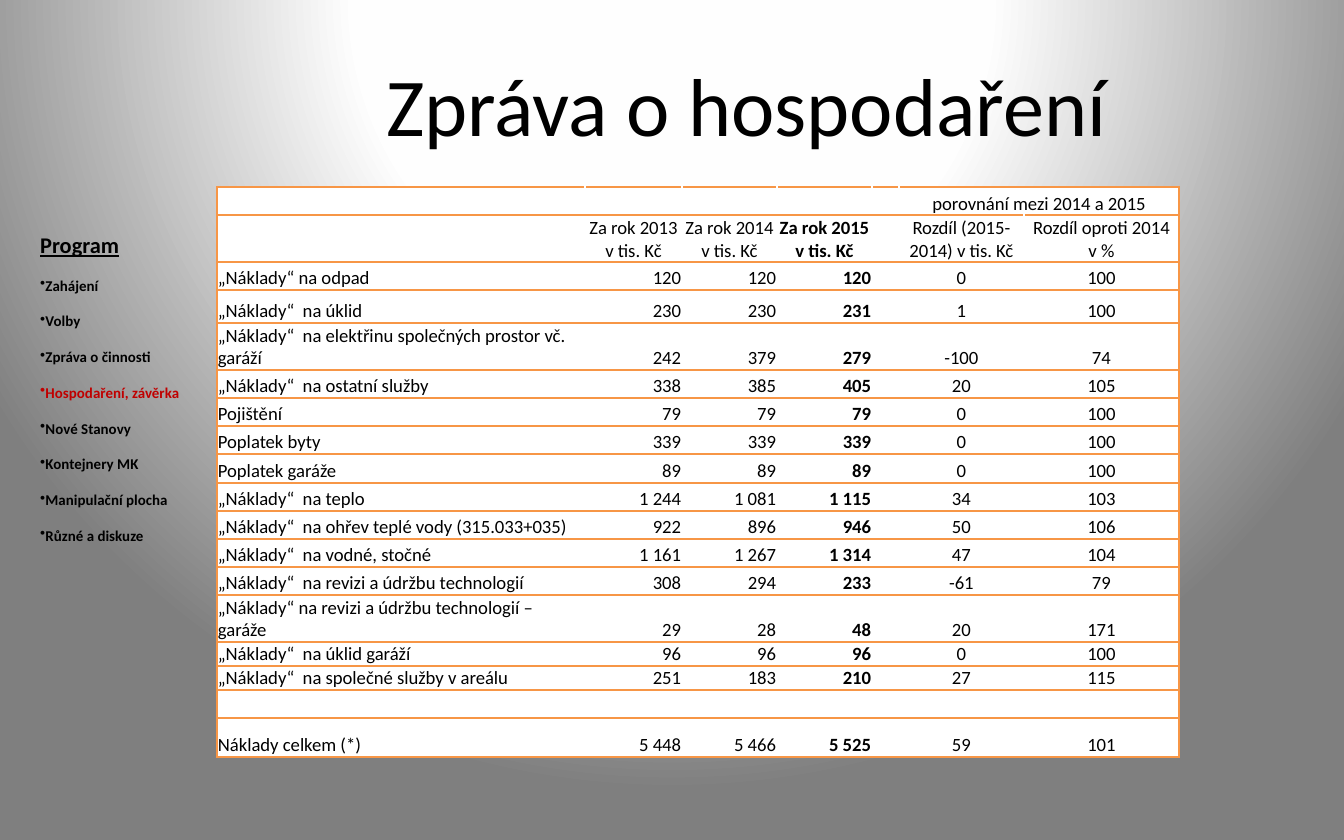
from dataclasses import dataclass

from lxml.etree import SubElement
from pptx import Presentation
from pptx.dml.color import RGBColor
from pptx.enum.text import MSO_ANCHOR, PP_ALIGN
from pptx.oxml import parse_xml
from pptx.oxml.ns import nsdecls, qn
from pptx.util import Pt


@dataclass
class Theme:
    font: str = "Calibri"
    ink: str = "000000"
    accent: str = "C00000"
    border: str = "F79646"
    paper: str = "FFFFFF"
    title: int = 44
    heading: int = 12
    menu: int = 8
    table: int = 10


theme = Theme()
EMU_PER_PX = 914400 / 134.4


def px(length):
    return round(length * EMU_PER_PX)


def style(paragraph, size, color=theme.ink, bold=False):
    paragraph.font.name = theme.font
    paragraph.font.size = Pt(size)
    paragraph.font.bold = bold
    paragraph.font.color.rgb = RGBColor.from_string(color)


presentation = Presentation()
presentation.slide_width, presentation.slide_height = px(1344), px(840)
slide = presentation.slides.add_slide(presentation.slide_layouts[6])

# Background: radial gradient centred above the slide
stops = "".join(
    f'<a:gs pos="{position * 1000}"><a:srgbClr val="{color}"/></a:gs>'
    for position, color in ((0, "FFFFFF"), (40, "FEFEFE"), (100, "7F7F7F"))
)
background = parse_xml(
    f'<p:bg {nsdecls("p", "a")}><p:bgPr><a:gradFill rotWithShape="1">'
    f'<a:gsLst>{stops}</a:gsLst><a:path path="circle">'
    '<a:fillToRect l="50000" t="-80000" r="50000" b="180000"/></a:path>'
    "</a:gradFill><a:effectLst/></p:bgPr></p:bg>"
)
slide.element.cSld.insert(0, background)

# Title
title_frame = slide.shapes.add_textbox(px(216), px(34), px(1061), px(140)).text_frame
title_frame.word_wrap = True
title_frame.vertical_anchor = MSO_ANCHOR.MIDDLE
title = title_frame.paragraphs[0]
title.text = "Zpráva o hospodaření"
title.alignment = PP_ALIGN.CENTER
style(title, theme.title)

# Cost table
rows = [
    ["", "", "", "", "", "porovnání mezi 2014 a 2015", ""],
    ["", "Za rok 2013\nv tis. Kč", "Za rok 2014\nv tis. Kč", "Za rok 2015\nv tis. Kč",
     "", "Rozdíl (2015-2014) v tis. Kč", "Rozdíl oproti 2014\vv %"],
    ["„Náklady“ na odpad", "120", "120", "120", "", "0", "100"],
    ["„Náklady“  na úklid", "230", "230", "231", "", "1", "100"],
    ["„Náklady“  na elektřinu společných prostor vč. garáží",
     "242", "379", "279", "", "-100", "74"],
    ["„Náklady“  na ostatní služby", "338", "385", "405", "", "20", "105"],
    ["Pojištění", "79", "79", "79", "", "0", "100"],
    ["Poplatek byty", "339", "339", "339", "", "0", "100"],
    ["Poplatek garáže", "89", "89", "89", "", "0", "100"],
    ["„Náklady“  na teplo", "1 244", "1 081", "1 115", "", "34", "103"],
    ["„Náklady“  na ohřev teplé vody (315.033+035)",
     "922", "896", "946", "", "50", "106"],
    ["„Náklady“  na vodné, stočné", "1 161", "1 267", "1 314", "", "47", "104"],
    ["„Náklady“  na revizi a údržbu technologií",
     "308", "294", "233", "", "-61", "79"],
    ["„Náklady“ na revizi a údržbu technologií – garáže",
     "29", "28", "48", "", "20", "171"],
    ["„Náklady“  na úklid garáží", "96", "96", "96", "", "0", "100"],
    ["„Náklady“  na společné služby v areálu", "251", "183", "210", "", "27", "115"],
    [""] * 7,
    ["Náklady celkem (*)", "5 448", "5 466", "5 525", "", "59", "101"],
]
column_widths = [368, 97, 95, 95, 27, 125, 155]
row_heights = [28, 47, 28, 33, 47, 28, 28, 28, 29, 28, 28, 28, 28, 47, 24, 24, 28, 39]
HEADER_ROWS = 2
CURRENT_YEAR = 3
LAST_COLUMN = len(column_widths) - 1
alignments = [PP_ALIGN.LEFT] + [PP_ALIGN.RIGHT] * 3 + [PP_ALIGN.CENTER] * 3

table = slide.shapes.add_table(
    len(rows), len(column_widths), px(217), px(187),
    px(sum(column_widths)), px(sum(row_heights)),
).table
table.first_row = table.horz_banding = False
for column, width in zip(table.columns, column_widths):
    column.width = px(width)
for row, height in zip(table.rows, row_heights):
    row.height = px(height)
table.cell(0, 5).merge(table.cell(0, 6))

for row_index, texts in enumerate(rows):
    for column_index, text in enumerate(texts):
        cell = table.cell(row_index, column_index)
        cell.text_frame.text = text
        cell.vertical_anchor = MSO_ANCHOR.BOTTOM
        cell.margin_left = cell.margin_right = cell.margin_top = px(1)
        cell.margin_bottom = 0
        for paragraph in cell.text_frame.paragraphs:
            is_header = row_index < HEADER_ROWS
            paragraph.alignment = PP_ALIGN.CENTER if is_header else alignments[column_index]
            style(paragraph, theme.table, bold=column_index == CURRENT_YEAR)
            if not text:
                SubElement(paragraph._p, qn("a:endParaRPr"), sz=str(theme.table * 100))

        # Orange rules between rows and around the table
        sides = ["T", "B"]
        if column_index == 0:
            sides.insert(0, "L")
        elif column_index == LAST_COLUMN or cell.is_merge_origin:
            sides.insert(0, "R")
        for side in sides:
            line = SubElement(cell._tc.get_or_add_tcPr(), qn(f"a:ln{side}"), w=str(Pt(1)))
            SubElement(SubElement(line, qn("a:solidFill")), qn("a:srgbClr"), val=theme.border)
        cell.fill.solid()
        cell.fill.fore_color.rgb = RGBColor.from_string(theme.paper)

# Programme menu with the current item highlighted
menu_items = [
    "Zahájení", "Volby", "Zpráva o činnosti", "Hospodaření, závěrka",
    "Nové Stanovy", "Kontejnery MK", "Manipulační plocha", "Různé a diskuze",
]
CURRENT_ITEM = "Hospodaření, závěrka"
menu_frame = slide.shapes.add_textbox(px(27), px(198), px(169), px(358)).text_frame
menu_frame.word_wrap = True
heading = menu_frame.paragraphs[0]
heading.text = "Program"
heading.line_spacing = 2.0
style(heading, theme.heading, bold=True)
heading.font.underline = True
for item in menu_items:
    paragraph = menu_frame.add_paragraph()
    paragraph.text = item
    paragraph.line_spacing = 2.0
    SubElement(paragraph._p.get_or_add_pPr(), qn("a:buChar"), char="•")
    color = theme.accent if item == CURRENT_ITEM else theme.ink
    style(paragraph, theme.menu, color, bold=True)

presentation.save("out.pptx")
